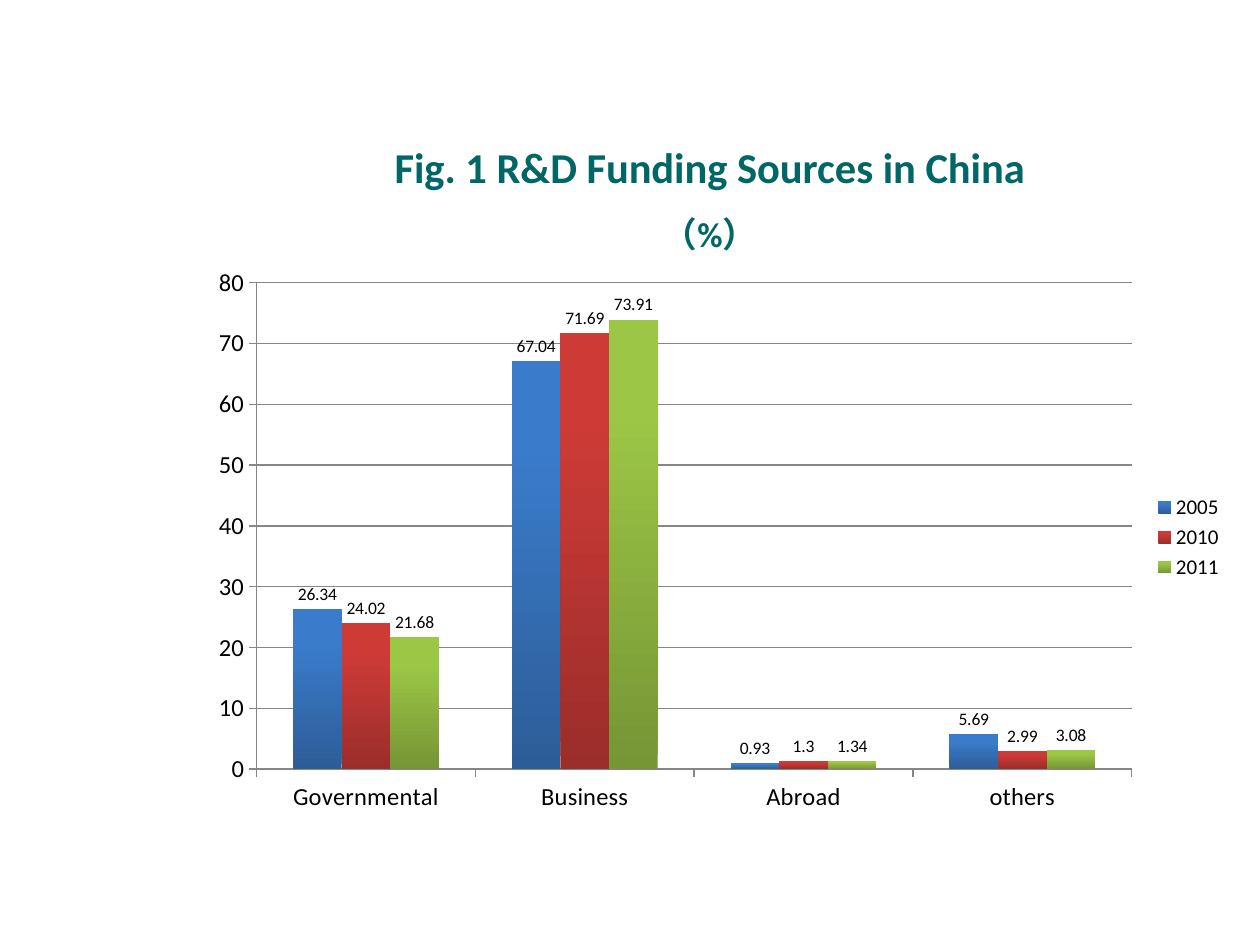
from lxml import etree
from pptx import Presentation, util as u
from pptx.chart import data as chart_data
from pptx.dml import color
from pptx.enum import chart as charts, text

FONT = "Calibri"
TITLE_COLOUR = "006666"
AXIS_COLOUR = "868686"
CATEGORIES = ["Governmental", "Business", "Abroad", "others"]
FUNDING = {
    "2005": ([26.34, 67.04, 0.93, 5.69], "2C5D98", "3A7CCB"),
    "2010": ([24.02, 71.69, 1.3, 2.99], "9B2D2A", "CE3B37"),
    "2011": ([21.68, 73.91, 1.34, 3.08], "769535", "9CC746"),
}
PLOT_LAYOUT = {"x": 0.06, "y": 0.05, "w": 0.84, "h": 0.86}


def rgb(value):
    return color.RGBColor.from_string(value)


class SlideBuilder:
    """Holds the slide style and adds each kind of element."""

    def __init__(self, slide, font):
        self.slide = slide
        self.font = font

    def style(self, font, size, colour="000000", bold=False):
        font.name = self.font
        font.size = u.Pt(size)
        font.bold = bold
        font.color.rgb = rgb(colour)

    def title(self, area, lines, colour):
        box = self.slide.shapes.add_textbox(*map(u.Pt, area))
        frame = box.text_frame
        frame.word_wrap = True
        frame.vertical_anchor = text.MSO_ANCHOR.MIDDLE
        para = frame.paragraphs[0]
        para.alignment = text.PP_ALIGN.CENTER
        para.line_spacing = 1.5
        for index, (words, size) in enumerate(lines):
            if index:
                para.add_line_break()
            span = para.add_run()
            span.text = words
            self.style(span.font, size, colour, bold=True)

    def column_chart(self, area, categories, series_data, layout):
        data = chart_data.CategoryChartData()
        data.categories = categories
        for name, (values, _, _) in series_data.items():
            data.add_series(name, values)
        kind = charts.XL_CHART_TYPE.COLUMN_CLUSTERED
        frame = self.slide.shapes.add_chart(kind, *map(u.Pt, area), data)
        chart = frame.chart
        chart.has_title = False
        self.style(chart.font, 10)
        plot = chart.plots[0]
        plot.gap_width = 150
        plot.overlap = 0
        plot.vary_by_categories = False
        for series, (_, bottom, top) in zip(plot.series, series_data.values()):
            self.bars(series, bottom, top)
        for axis in (chart.category_axis, chart.value_axis):
            self.axis(axis)
        chart.value_axis.minimum_scale = 0
        chart.value_axis.maximum_scale = 80
        chart.value_axis.major_unit = 10
        chart.value_axis.has_major_gridlines = True
        self.line(chart.value_axis.major_gridlines.format.line)
        chart.has_legend = True
        chart.legend.position = charts.XL_LEGEND_POSITION.RIGHT
        chart.legend.include_in_layout = False
        self.style(chart.legend.font, 12)
        self.place_plot(chart, layout)

    def bars(self, series, bottom, top):
        fill = series.format.fill
        fill.gradient()
        fill.gradient_angle = 90
        for stop, colour, position in zip(fill.gradient_stops, (bottom, top), (0, 0.8)):
            stop.color.rgb = rgb(colour)
            stop.position = position
        series.invert_if_negative = False
        labels = series.data_labels
        labels.show_value = True
        labels.position = charts.XL_LABEL_POSITION.OUTSIDE_END
        self.style(labels.font, 10)

    def axis(self, axis):
        axis.major_tick_mark = charts.XL_TICK_MARK.OUTSIDE
        axis.minor_tick_mark = charts.XL_TICK_MARK.NONE
        self.line(axis.format.line)
        self.style(axis.tick_labels.font, 14)

    def line(self, line):
        line.color.rgb = rgb(AXIS_COLOUR)
        line.width = u.Pt(0.75)

    def place_plot(self, chart, layout):
        area = chart.element.xpath("c:chart/c:plotArea")[0]
        for old in area.xpath("c:layout"):
            area.remove(old)
        tag = "{" + area.nsmap["c"] + "}"
        holder = etree.Element(tag + "layout")
        area.insert(0, holder)
        manual = etree.SubElement(holder, tag + "manualLayout")
        modes = {"layoutTarget": "inner", "xMode": "edge", "yMode": "edge"}
        for name, value in {**modes, **layout}.items():
            etree.SubElement(manual, tag + name, val=str(value))


def main():
    deck = Presentation()
    deck.slide_width, deck.slide_height = u.Pt(720), u.Pt(540)
    page = SlideBuilder(deck.slides.add_slide(deck.slide_layouts[6]), FONT)
    heading = [("Fig. 1 R&D Funding Sources in China", 24.3), ("（%）", 19.8)]
    page.title((121.7, 60.5, 568, 90), heading, TITLE_COLOUR)
    page.column_chart((110.9, 145.4, 595.4, 323.3), CATEGORIES, FUNDING, PLOT_LAYOUT)
    deck.save("out.pptx")


if __name__ == "__main__":
    main()
